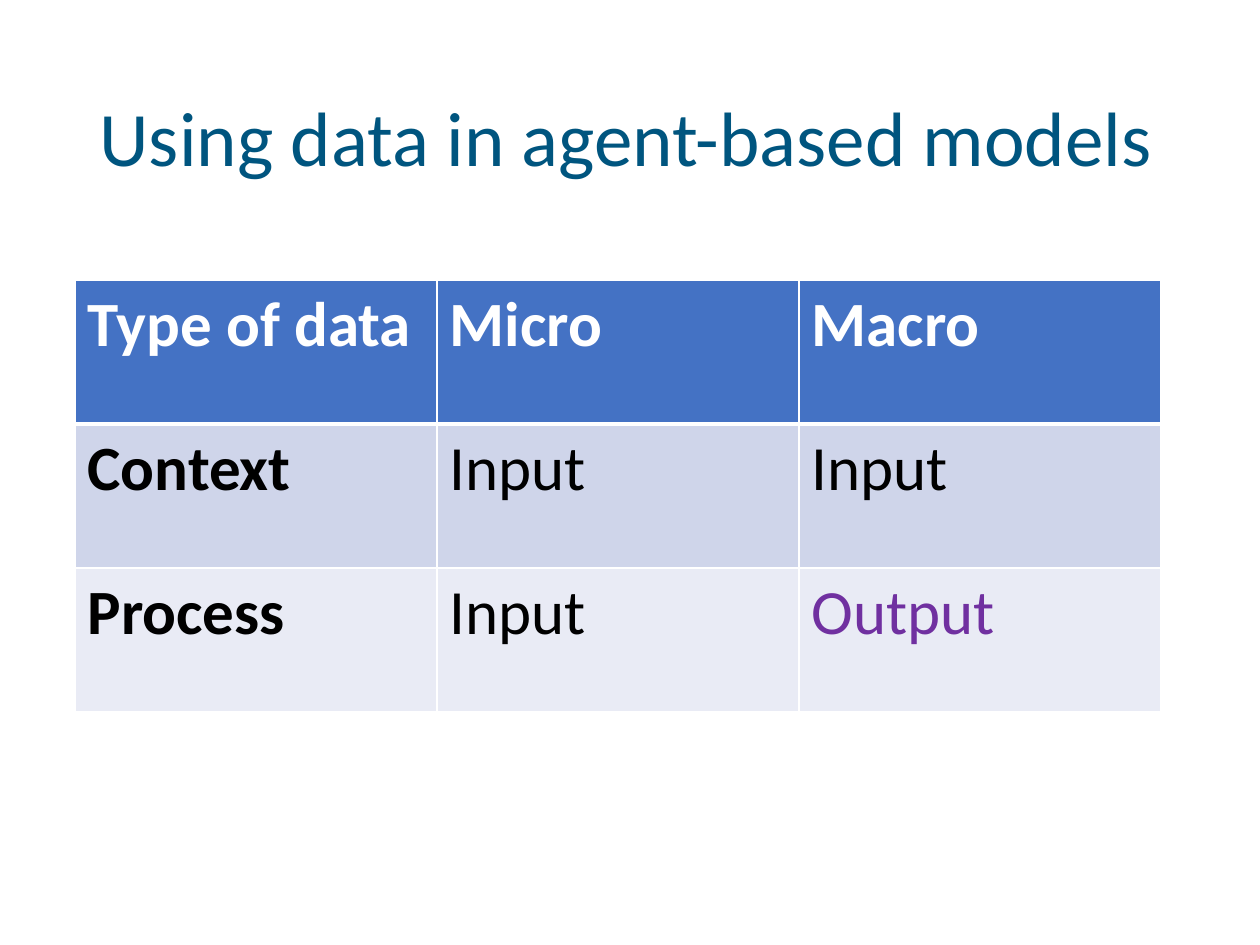
from dataclasses import dataclass

from lxml import etree
from pptx import Presentation
from pptx.dml.color import RGBColor
from pptx.enum.text import MSO_ANCHOR, PP_ALIGN
from pptx.oxml.ns import qn
from pptx.util import Emu, Pt

LEFT = PP_ALIGN.LEFT
TOP = MSO_ANCHOR.TOP
MIDDLE = MSO_ANCHOR.MIDDLE
TITLE_ONLY = 5
PX_PER_INCH = 126


@dataclass(frozen=True)
class Theme:
    font: str = "Calibri"
    title_size: int = 44
    cell_size: int = 36
    title: str = "00557F"
    header_fill: str = "4472C4"
    band_fills: tuple = ("CFD5EA", "E9EBF5")
    header_text: str = "FFFFFF"
    body_text: str = "000000"
    output_text: str = "7030A0"
    border: str = "FFFFFF"
    thin: int = 1
    thick: int = 3


THEME = Theme()

DATA_ROLES = [
    ["Type of data", "Micro", "Macro"],
    ["Context", "Input", "Input"],
    ["Process", "Input", "Output"],
]


def px(length):
    return Emu(round(length * 914400 / PX_PER_INCH))


def style_font(para, size, color, bold=False):
    para.font.name = THEME.font
    para.font.size = Pt(size)
    para.font.bold = bold
    para.font.color.rgb = RGBColor.from_string(color)


def add_title(page, text, left, top, width, height):
    title = page.shapes.title
    title.left, title.top = px(left), px(top)
    title.width, title.height = px(width), px(height)
    frame = title.text_frame
    frame.text = text
    frame.word_wrap = True
    frame.vertical_anchor = MIDDLE
    para = frame.paragraphs[0]
    para.alignment = LEFT
    para.line_spacing = 0.9
    style_font(para, THEME.title_size, THEME.title)


def set_borders(cell, widths):
    properties = cell._tc.get_or_add_tcPr()
    for index, (side, width) in enumerate(widths.items()):
        line = etree.Element(qn(f"a:ln{side}"), w=str(Pt(width)))
        fill = etree.SubElement(line, qn("a:solidFill"))
        etree.SubElement(fill, qn("a:srgbClr"), val=THEME.border)
        properties.insert(index, line)


def format_cell(cell, text, row, column):
    is_header = row == 0
    if is_header:
        fill, color = THEME.header_fill, THEME.header_text
    else:
        fill = THEME.band_fills[(row - 1) % 2]
        color = THEME.output_text if text == "Output" else THEME.body_text
    cell.text = text
    cell.vertical_anchor = TOP
    cell.fill.solid()
    cell.fill.fore_color.rgb = RGBColor.from_string(fill)
    style_font(cell.text_frame.paragraphs[0], THEME.cell_size, color,
               bold=is_header or column == 0)
    set_borders(cell, {
        "L": THEME.thin,
        "R": THEME.thin,
        "T": THEME.thick if row == 1 else THEME.thin,
        "B": THEME.thick if is_header else THEME.thin,
    })


def add_data_table(page, rows, left, top, column_width, row_height):
    row_count, column_count = len(rows), len(rows[0])
    table = page.shapes.add_table(
        row_count, column_count, px(left), px(top),
        px(column_width * column_count), px(row_height * row_count)).table
    for column in table.columns:
        column.width = px(column_width)
    for r, texts in enumerate(rows):
        table.rows[r].height = px(row_height)
        for c, text in enumerate(texts):
            format_cell(table.cell(r, c), text, r, c)


def main():
    deck = Presentation()
    deck.slide_width, deck.slide_height = px(1260), px(945)
    page = deck.slides.add_slide(deck.slide_layouts[TITLE_ONLY])
    add_title(page, "Using data in agent-based models", 87, 50, 1086, 183)
    add_data_table(page, DATA_ROLES, 75, 280, 362, 144)
    deck.save("out.pptx")


if __name__ == "__main__":
    main()
